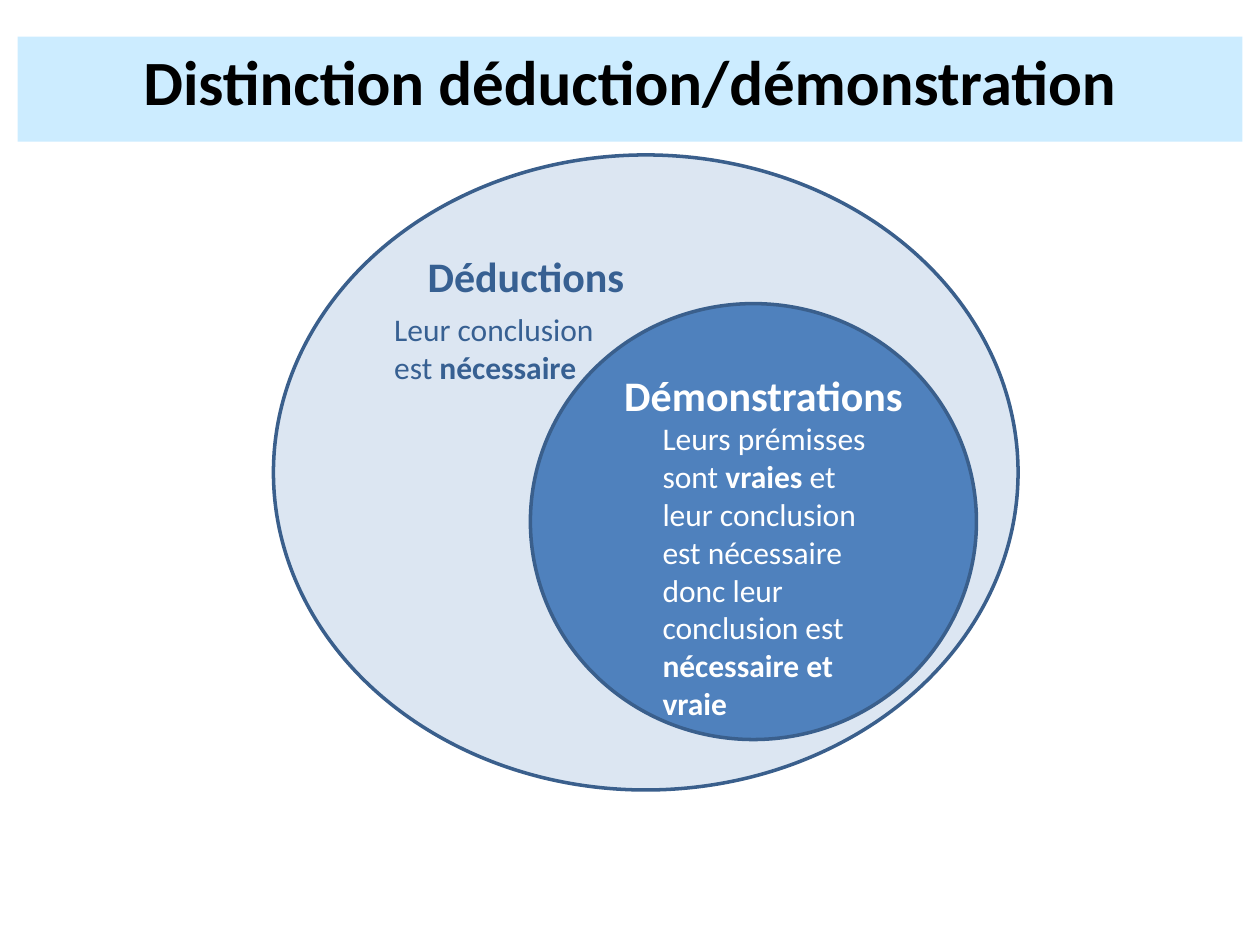
from dataclasses import dataclass

import pptx
import pptx.dml.color
import pptx.enum.shapes
import pptx.enum.text
import pptx.util

Inches = pptx.util.Inches
Pt = pptx.util.Pt
RGBColor = pptx.dml.color.RGBColor
PP_ALIGN = pptx.enum.text.PP_ALIGN
MSO_ANCHOR = pptx.enum.text.MSO_ANCHOR

BLACK = RGBColor(0x00, 0x00, 0x00)
WHITE = RGBColor(0xFF, 0xFF, 0xFF)
BANNER = RGBColor(0xCC, 0xEC, 0xFF)
PALE_BLUE = RGBColor(0xDC, 0xE6, 0xF2)
MID_BLUE = RGBColor(0x4F, 0x81, 0xBD)
DARK_BLUE = RGBColor(0x37, 0x60, 0x92)
OUTLINE = RGBColor(0x3A, 0x5F, 0x8C)

Box = tuple[float, float, float, float]


@dataclass
class Run:
    text: str
    bold: bool = False


@dataclass
class Ellipse:
    box: Box
    fill: RGBColor


@dataclass
class Label:
    box: Box
    runs: list[Run]
    size: int
    color: RGBColor
    align: PP_ALIGN = PP_ALIGN.LEFT


TITLE = Label((0.14, 0.29, 9.72, 0.71),
              [Run("Distinction déduction/démonstration", True)],
              36, BLACK, PP_ALIGN.CENTER)

ELLIPSES = [
    Ellipse((2.17, 1.23, 5.91, 5.04), PALE_BLUE),
    Ellipse((4.21, 2.41, 3.54, 3.46), MID_BLUE),
]

LABELS = [
    Label((3.11, 1.94, 2.13, 0.5), [Run("Déductions", True)],
          24, DARK_BLUE, PP_ALIGN.CENTER),
    Label((3.03, 2.41, 1.85, 0.71),
          [Run("Leur conclusion est "), Run("nécessaire", True)],
          18, DARK_BLUE),
    Label((4.76, 2.88, 2.6, 0.5), [Run("Démonstrations", True)],
          24, WHITE, PP_ALIGN.CENTER),
    Label((5.16, 3.28, 2.01, 2.52),
          [Run("Leurs prémisses sont "), Run("vraies", True),
           Run(" et leur conclusion est nécessaire donc leur conclusion est "),
           Run("nécessaire et vraie", True)],
          18, WHITE),
]


def inches(box: Box) -> list[pptx.util.Length]:
    return [Inches(v) for v in box]


def write_text(sp, label: Label) -> None:
    tf = sp.text_frame
    frame_format = {
        "word_wrap": True,
        "auto_size": pptx.enum.text.MSO_AUTO_SIZE.SHAPE_TO_FIT_TEXT,
        "vertical_anchor": MSO_ANCHOR.TOP,
    }
    for name, value in frame_format.items():
        setattr(tf, name, value)
    p = tf.paragraphs[0]
    p.alignment = label.align
    for run in label.runs:
        r = p.add_run()
        r.text = run.text
        font_format = {"name": "Calibri", "size": Pt(label.size), "bold": run.bold}
        for name, value in font_format.items():
            setattr(r.font, name, value)
        r.font.color.rgb = label.color


def add_title(s, label: Label) -> None:
    sp = s.shapes.title
    for name, value in zip(("left", "top", "width", "height"), inches(label.box)):
        setattr(sp, name, value)
    sp.fill.solid()
    sp.fill.fore_color.rgb = BANNER
    write_text(sp, label)


def add_ellipse(s, ellipse: Ellipse) -> None:
    sp = s.shapes.add_shape(pptx.enum.shapes.MSO_SHAPE.OVAL, *inches(ellipse.box))
    sp.shadow.inherit = False
    sp.fill.solid()
    sp.fill.fore_color.rgb = ellipse.fill
    sp.line.color.rgb = OUTLINE
    sp.line.width = Pt(2)


def add_label(s, label: Label) -> None:
    write_text(s.shapes.add_textbox(*inches(label.box)), label)


def main() -> None:
    prs = pptx.Presentation()
    prs.slide_width, prs.slide_height = Inches(10), Inches(7.5)
    s = prs.slides.add_slide(prs.slide_layouts[5])
    add_title(s, TITLE)
    for ellipse in ELLIPSES:
        add_ellipse(s, ellipse)
    for label in LABELS:
        add_label(s, label)
    prs.save("out.pptx")


if __name__ == "__main__":
    main()
